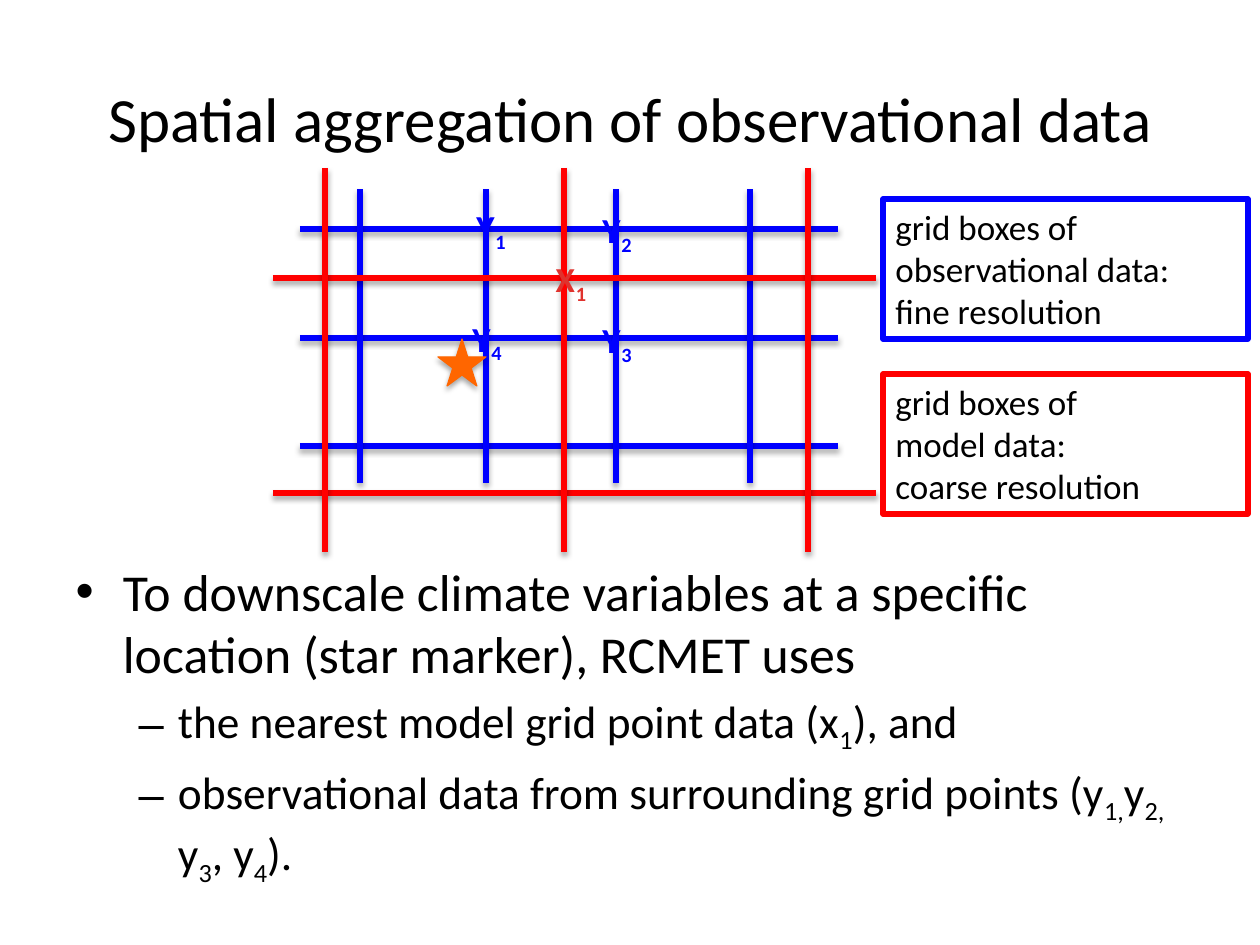
import pptx
import pptx.dml.color
import pptx.enum.shapes
import pptx.enum.text
import pptx.oxml
import pptx.util

PX = 914400 / 126
COLORS = {"ink": "000000", "fine": "0000FF", "coarse": "FF0000", "star": "FF6600",
          "x_top": "E0322D", "x_bottom": "A2201C"}
SHADOW = (
    '<a:effectLst xmlns:a="http://schemas.openxmlformats.org/drawingml/2006/main">'
    '<a:outerShdw blurRad="39370" dist="22860" dir="5400000" rotWithShape="0">'
    '<a:srgbClr val="000000"><a:alpha val="35000"/></a:srgbClr>'
    '</a:outerShdw></a:effectLst>')
CENTER = pptx.enum.text.PP_ALIGN.CENTER


def px(*lengths):
    return [round(length * PX) for length in lengths]


def write(frame, lines, size, color="ink", bold=False, align=None, spacing=None, levels=None):
    """Fill a text frame; every second part between bars is a subscript."""
    frame.word_wrap = True
    frame.auto_size = pptx.enum.text.MSO_AUTO_SIZE.NONE
    for row, line in enumerate(lines):
        paragraph = frame.paragraphs[0] if row == 0 else frame.add_paragraph()
        paragraph.alignment = align
        if levels:
            paragraph.level = levels[row]
        for part, words in enumerate(line.split("|")):
            run = paragraph.add_run()
            run.text = words
            run.font.name = "Calibri"
            run.font.size = pptx.util.Pt(size[row] if levels else size)
            run.font.bold = bold
            run.font.color.rgb = pptx.dml.color.RGBColor.from_string(COLORS[color])
            properties = run._r.get_or_add_rPr()
            if part % 2:
                properties.set("baseline", "-25000")
            if spacing:
                properties.set("spc", str(spacing))


deck = pptx.Presentation()
deck.slide_width, deck.slide_height = px(1260, 945)
slide = deck.slides.add_slide(deck.slide_layouts[1])
shapes = slide.shapes

# Title and explanation
title, explanation = shapes.title, slide.placeholders[1]
title.left, title.top, title.width, title.height = px(63, 38, 1134, 158)
write(title.text_frame, ["Spatial aggregation of observational data"], 36, align=CENTER)
explanation.left, explanation.top, explanation.width, explanation.height = px(63, 553, 1134, 290)
write(explanation.text_frame,
      ["To downscale climate variables at a specific location (star marker), RCMET uses",
       "the nearest model grid point data (x|1|), and",
       "observational data from surrounding grid points (y|1,|y|2, |y|3|, y|4|)."],
      [29.6, 25.9, 25.9], levels=[0, 1, 1])

# Fine and coarse grids: row positions, row span, column positions, column span
grids = [("fine", (229, 338, 446), (300, 838), (486, 616, 750, 360), (189, 483)),
         ("coarse", (493, 278), (273, 876), (564, 325, 808), (168, 552))]
for color, rows, (left, right), columns, (top, bottom) in grids:
    ends = [(left, y, right, y) for y in rows] + [(x, top, x, bottom) for x in columns]
    for end in ends:
        grid_line = shapes.add_connector(pptx.enum.shapes.MSO_CONNECTOR.STRAIGHT, *px(*end))
        grid_line.line.color.rgb = pptx.dml.color.RGBColor.from_string(COLORS[color])
        grid_line.line.width = pptx.util.Pt(3)
        grid_line._element.spPr.append(pptx.oxml.parse_xml(SHADOW))

# Legend
legend = [("fine", 199, ["grid boxes of observational data:", "fine resolution"]),
          ("coarse", 374, ["grid boxes of", "model data:", "coarse resolution"])]
for color, top, lines in legend:
    key = shapes.add_textbox(*px(883, top, 365, 140))
    key.line.color.rgb = pptx.dml.color.RGBColor.from_string(COLORS[color])
    key.line.width = pptx.util.Pt(3)
    write(key.text_frame, lines, 20)

# Location marker
star = shapes.add_shape(pptx.enum.shapes.MSO_SHAPE.STAR_5_POINT, *px(438, 339, 48, 47))
star.fill.solid()
star.fill.fore_color.rgb = pptx.dml.color.RGBColor.from_string(COLORS["star"])
star.line.color.rgb = pptx.dml.color.RGBColor.from_string(COLORS["star"])
star.line.width = pptx.util.Pt(0.75)
star._element.spPr.append(pptx.oxml.parse_xml(SHADOW))

# Grid point labels
points = [("X|1", 534, 251, "x_top"), ("Y|1", 454, 199, "fine"), ("Y|2", 580, 202, "fine"),
          ("Y|3", 580, 312, "fine"), ("Y|4", 450, 311, "fine")]
for name, left, top, color in points:
    point = shapes.add_textbox(*px(left, top, 74, 55))
    write(point.text_frame, [name], 20, color, bold=True, align=CENTER, spacing=50)
    if color == "x_top":
        for run in point.text_frame.paragraphs[0].runs:
            run.font.fill.gradient()
            run.font.fill.gradient_angle = 270
            stops = zip(run.font.fill.gradient_stops, [(0.25, "x_top"), (1, "x_bottom")])
            for stop, (position, shade) in stops:
                stop.position = position
                stop.color.rgb = pptx.dml.color.RGBColor.from_string(COLORS[shade])

deck.save("out.pptx")
